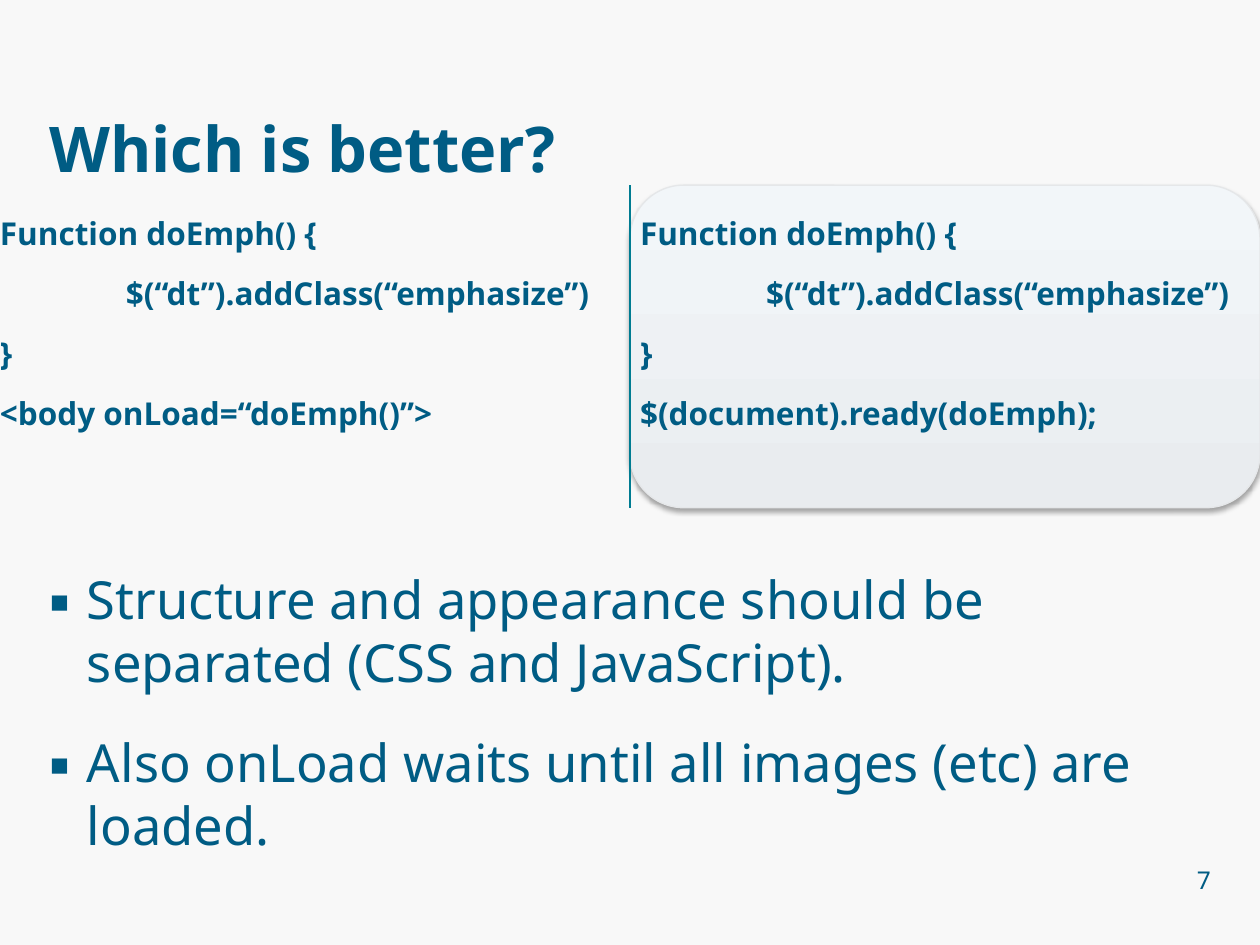
from dataclasses import dataclass

from lxml.etree import SubElement
from pptx import Presentation
from pptx.dml.color import RGBColor
from pptx.enum.shapes import MSO_CONNECTOR, MSO_SHAPE
from pptx.enum.text import MSO_ANCHOR, PP_ALIGN
from pptx.oxml.ns import qn
from pptx.util import Inches, Pt


@dataclass(frozen=True)
class Theme:
    font: str = "Noto Sans"
    background: str = "F8F8F8"
    ink: str = "005C84"
    divider: str = "007C92"
    panel_bottom: str = "E9ECEF"
    panel_top: str = "F2F6F9"
    panel_edge: str = "E5E7E9"
    shadow: str = "000000"
    title_size: int = 36
    point_size: int = 30
    code_size: int = 18
    number_size: int = 14


THEME = Theme()
WIDTH, HEIGHT = Inches(10), Inches(7.5)
COLUMN, ROW = WIDTH / 100, HEIGHT / 100
MARGIN, CONTENT_WIDTH = 3.9, 92.2
MIDDLE, CODE_TOP, CODE_HEIGHT = 50, 19.6, 34.13
PARAGRAPH_GAP = 0.7

COMMON_CODE = ["Function doEmph() {", "\t$(“dt”).addClass(“emphasize”)", "}"]
CODE_VERSIONS = [
    (0, "<body onLoad=“doEmph()”>"),
    (50.8, "$(document).ready(doEmph);"),
]
POINTS = [
    "Structure and appearance should be separated (CSS and JavaScript).",
    "Also onLoad waits until all images (etc) are loaded.",
]


def on_grid(left, top, width, height):
    return (round(left * COLUMN), round(top * ROW),
            round(width * COLUMN), round(height * ROW))


def color(value):
    return RGBColor.from_string(value)


def apply(target, values):
    for name, value in values.items():
        setattr(target, name, value)


def add_bullet(paragraph):
    properties = paragraph._p.get_or_add_pPr()
    properties.set("marL", str(Inches(0.3)))
    properties.set("indent", str(-Inches(0.3)))
    bullet_color = SubElement(properties, qn("a:buClr"))
    SubElement(bullet_color, qn("a:srgbClr"), val=THEME.ink)
    SubElement(properties, qn("a:buFont"), typeface=THEME.font)
    SubElement(properties, qn("a:buChar"), char="▪")


def add_tab_stop(paragraph):
    stops = SubElement(paragraph._p.get_or_add_pPr(), qn("a:tabLst"))
    SubElement(stops, qn("a:tab"), pos=str(Inches(1)), algn="l")


def add_text(slide, area, lines, size, bold=False, decorate=None,
             anchor=MSO_ANCHOR.TOP, align=PP_ALIGN.LEFT):
    frame = slide.shapes.add_textbox(*on_grid(*area)).text_frame
    apply(frame, {"word_wrap": True, "vertical_anchor": anchor,
                  "margin_left": 0, "margin_right": 0,
                  "margin_top": 0, "margin_bottom": 0})
    for index, line in enumerate(lines):
        paragraph = frame.paragraphs[0] if index == 0 else frame.add_paragraph()
        gap = Pt(size * PARAGRAPH_GAP) if index else Pt(0)
        apply(paragraph, {"alignment": align, "space_before": gap})
        if decorate:
            decorate(paragraph)
        run = paragraph.add_run()
        run.text = line
        apply(run.font, {"name": THEME.font, "size": Pt(size), "bold": bold})
        run.font.color.rgb = color(THEME.ink)


def add_panel(slide):
    panel = slide.shapes.add_shape(
        MSO_SHAPE.ROUNDED_RECTANGLE,
        *on_grid(MIDDLE, CODE_TOP, 100 - MIDDLE, CODE_HEIGHT))
    panel.fill.gradient()
    panel.fill.gradient_angle = 90
    shades = [THEME.panel_bottom, THEME.panel_top]
    for position, (stop, shade) in enumerate(zip(panel.fill.gradient_stops, shades)):
        stop.position = position
        stop.color.rgb = color(shade)
    panel.line.color.rgb = color(THEME.panel_edge)
    panel.line.width = Pt(0.75)
    panel.shadow.inherit = False
    effects = panel._element.spPr.find(qn("a:effectLst"))
    shadow = SubElement(effects, qn("a:outerShdw"), blurRad=str(Pt(3.1)),
                        dist=str(Pt(1.8)), dir="5400000", rotWithShape="0")
    tint = SubElement(shadow, qn("a:srgbClr"), val=THEME.shadow)
    SubElement(tint, qn("a:alpha"), val="35000")


def add_divider(slide):
    left, top, _, height = on_grid(MIDDLE, CODE_TOP, 0, CODE_HEIGHT)
    divider = slide.shapes.add_connector(
        MSO_CONNECTOR.STRAIGHT, left, top, left, top + height)
    divider.line.color.rgb = color(THEME.divider)
    divider.line.width = Pt(1)
    SubElement(divider._element.spPr, qn("a:effectLst"))


def main():
    deck = Presentation()
    apply(deck, {"slide_width": WIDTH, "slide_height": HEIGHT})
    slide = deck.slides.add_slide(deck.slide_layouts[6])
    slide.background.fill.solid()
    slide.background.fill.fore_color.rgb = color(THEME.background)

    add_panel(slide)
    add_text(slide, (MARGIN, 0, CONTENT_WIDTH, CODE_TOP), ["Which is better?"],
             THEME.title_size, bold=True, anchor=MSO_ANCHOR.BOTTOM)
    for left, last_line in CODE_VERSIONS:
        add_text(slide, (left, 22.67, 50.4, 28.93), COMMON_CODE + [last_line],
                 THEME.code_size, bold=True, decorate=add_tab_stop)
    add_divider(slide)
    add_text(slide, (MARGIN, 60, CONTENT_WIDTH, 30.4), POINTS,
             THEME.point_size, decorate=add_bullet)
    add_text(slide, (75.2, 92, 20.9, 2.67), ["7"], THEME.number_size,
             anchor=MSO_ANCHOR.BOTTOM, align=PP_ALIGN.RIGHT)
    deck.save("out.pptx")


if __name__ == "__main__":
    main()
